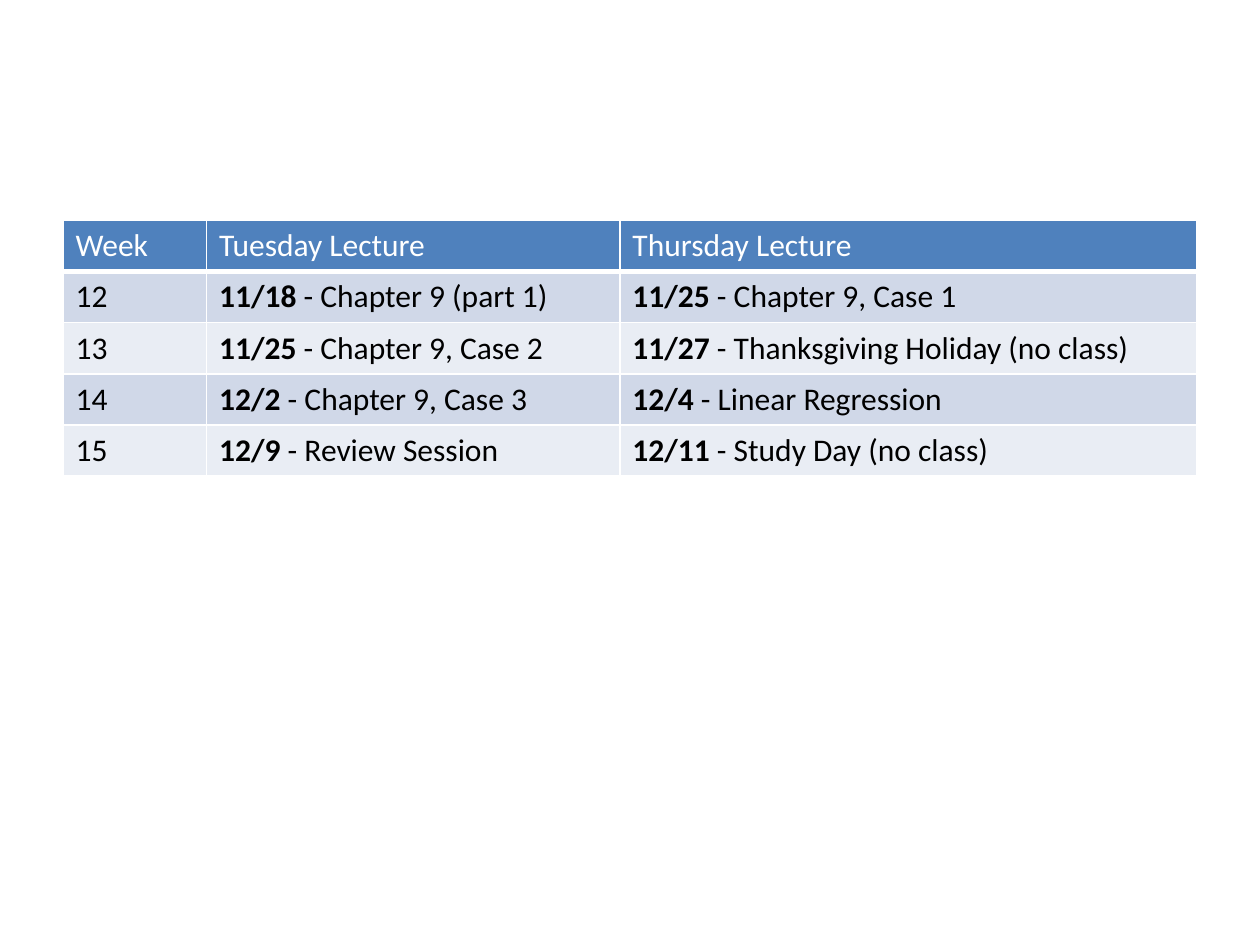
import pptx
import pptx.util
import pptx.dml.color
import pptx.oxml.ns
import lxml.etree

HUES = {"head": "4F81BD", "odd": "D0D8E8", "even": "E9EDF4",
        "white": "FFFFFF", "black": "000000"}
WIDTHS = [1.14, 3.28, 4.58]
HEADS = ["Week", "Tuesday Lecture", "Thursday Lecture"]
WEEKS = [
    ["12", ("11/18", " - Chapter 9 (part 1)"), ("11/25", " - Chapter 9, Case 1")],
    ["13", ("11/25", " - Chapter 9, Case 2"), ("11/27", " - Thanksgiving Holiday (no class)")],
    ["14", ("12/2", " - Chapter 9, Case 3"), ("12/4", " - Linear Regression")],
    ["15", ("12/9", " - Review Session"), ("12/11", " - Study Day (no class)")],
]


def color(name):
    return pptx.dml.color.RGBColor.from_string(HUES[name])


def write(para, text, bold=False, hue="black", size=18, face="Calibri"):
    run = para.add_run()
    run.text = text
    run.font.name = face
    run.font.size = pptx.util.Pt(size)
    run.font.bold = bold
    run.font.color.rgb = color(hue)


class Deck:
    def __init__(self, width, height):
        self.show = pptx.Presentation()
        self.show.slide_width = pptx.util.Inches(width)
        self.show.slide_height = pptx.util.Inches(height)
        self.slide = self.show.slides.add_slide(self.show.slide_layouts[6])

    def border(self, cell, base=1):
        props = cell._tc.get_or_add_tcPr()
        qn = pptx.oxml.ns.qn
        for side, width in zip("LRTB", (1, 1, 1, base)):
            line = lxml.etree.SubElement(props, qn("a:ln" + side),
                                         w=str(pptx.util.Pt(width)))
            fill = lxml.etree.SubElement(line, qn("a:solidFill"))
            lxml.etree.SubElement(fill, qn("a:srgbClr"), val=HUES["white"])

    def cell(self, cell, text, fill, hue="black", base=1):
        self.border(cell, base)
        cell.fill.solid()
        cell.fill.fore_color.rgb = color(fill)
        para = cell.text_frame.paragraphs[0]
        if isinstance(text, tuple):
            date, topic = text
            write(para, date, bold=True, hue=hue)
            write(para, topic, hue=hue)
        else:
            write(para, text, hue=hue)

    def table(self, left, top, widths, height, heads, rows):
        inch = pptx.util.Inches
        frame = self.slide.shapes.add_table(
            len(rows) + 1, len(widths), inch(left), inch(top),
            inch(sum(widths)), inch(height))
        grid = frame.table
        for col, width in zip(grid.columns, widths):
            col.width = inch(width)
        for col, text in enumerate(heads):
            self.cell(grid.cell(0, col), text, "head", "white", base=3)
        for row, texts in enumerate(rows, 1):
            fill = "odd" if row % 2 else "even"
            for col, text in enumerate(texts):
                self.cell(grid.cell(row, col), text, fill)


def main():
    deck = Deck(10, 7.5)
    deck.table(0.5, 1.75, WIDTHS, 2, HEADS, WEEKS)
    deck.show.save("out.pptx")


if __name__ == "__main__":
    main()
